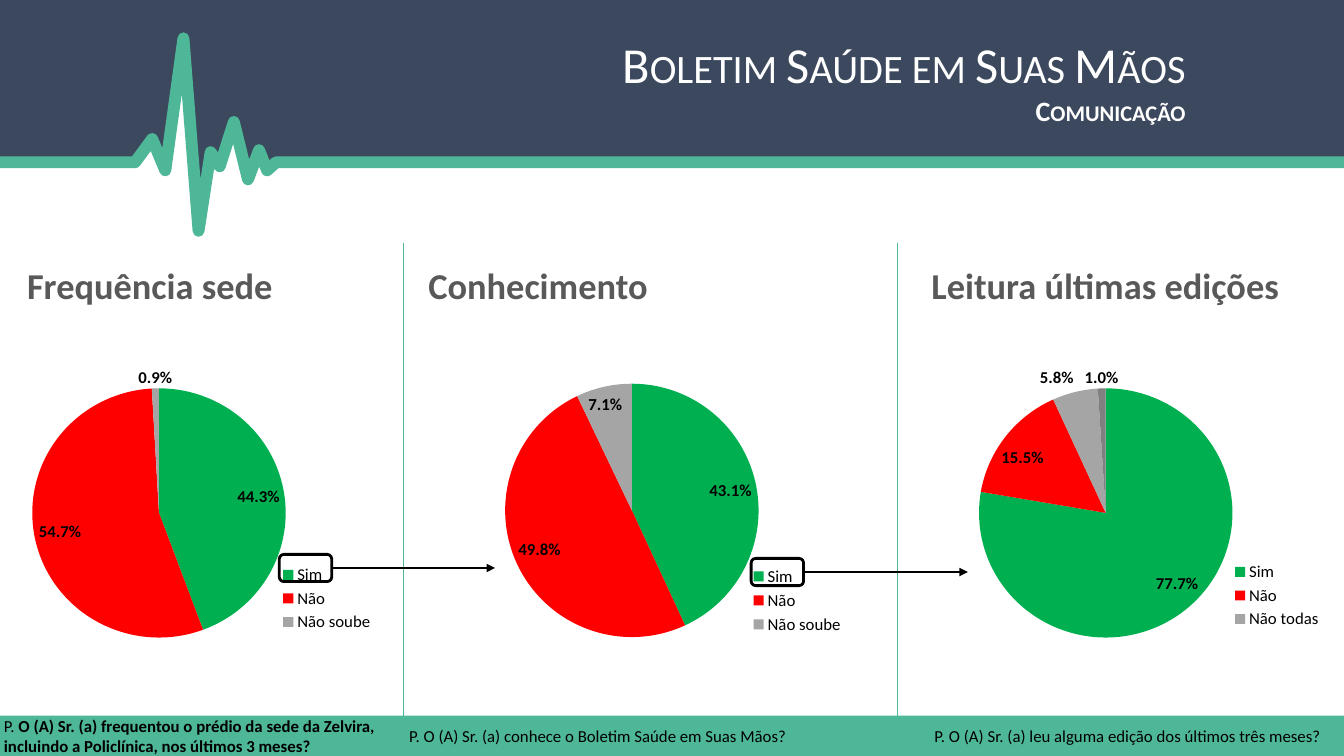
from lxml.etree import SubElement
from pptx import Presentation
from pptx.chart.data import CategoryChartData
from pptx.dml.color import RGBColor
from pptx.enum.chart import XL_CHART_TYPE, XL_LABEL_POSITION, XL_LEGEND_POSITION
from pptx.enum.shapes import MSO_CONNECTOR, MSO_SHAPE
from pptx.enum.text import MSO_ANCHOR, MSO_AUTO_SIZE, PP_ALIGN
from pptx.oxml import parse_xml
from pptx.oxml.ns import nsdecls, qn
from pptx.util import Inches, Pt

WIDE, HIGH = 13.33, 7.5
FONT = "Calibri"
NAVY, GREEN, WHITE, BLACK, GREY = "3B485D", "4EB798", "FFFFFF", "000000", "595959"
SLICES = ["00B050", "FF0000", "A5A5A5", "808080"]

TITLE = [("Boletim Saúde em Suas Mãos", 36, False), ("Comunicação", 20, True)]
PULSE = [(0, 1.61), (1.34, 1.61), (1.51, 1.38), (1.64, 1.69), (1.82, 0.38),
         (1.97, 2.29), (2.09, 1.51), (2.18, 1.65), (2.32, 1.21), (2.46, 1.78),
         (2.57, 1.49), (2.65, 1.69), (2.74, 1.61), (WIDE, 1.61)]

# heading, heading left and width, chart left, legend place, answers
PANELS = [
    ("Frequência sede", 0.17, 3.03, -0.52, (0.655, 0.65),
     {"Sim": 0.443, "Não": 0.547, "Não soube": 0.009}),
    ("Conhecimento", 4.15, 3.12, 4.17, (0.65, 0.66),
     {"Sim": 0.431, "Não": 0.498, "Não soube": 0.071}),
    ("Leitura últimas edições", 9.14, 3.94, 8.87, (0.665, 0.64),
     {"Sim": 0.777, "Não": 0.155, "Não todas": 0.058, "Não soube": 0.01}),
]
# box, then runs as (text, bold)
ASKED = [
    ((-0.06, 7.05, 4.08, 0.5),
     [("P. ", False), ("O (A) Sr. (a) frequentou o prédio da sede da Zelvira, "
                       "incluindo a Policlínica, nos últimos 3 meses?", True)]),
    ((3.96, 7.15, 4.99, 0.31),
     [("P. O (A) Sr. (a) conhece o Boletim Saúde em Suas Mãos?", False)]),
    ((9.17, 7.15, 4.17, 0.31),
     [("P. O (A) Sr. (a) leu alguma edição dos últimos três meses?", False)]),
]
SPLITS = [4, 8.9]
KEYS = [(2.77, 5.5, 4.91), (7.45, 5.54, 9.6)]  # left, top, arrow end


def rgb(code):
    return RGBColor.from_string(code)


def inches(*nums):
    return [Inches(num) for num in nums]


def style(font, size, color, bold=False):
    font.name, font.size, font.bold = FONT, Pt(size), bold
    font.color.rgb = rgb(color)


def paint(shape, fill=None, line=None, width=1):
    shape.shadow.inherit = False
    if fill:
        shape.fill.solid()
        shape.fill.fore_color.rgb = rgb(fill)
    else:
        shape.fill.background()
    if line:
        shape.line.color.rgb = rgb(line)
        shape.line.width = Pt(width)
    else:
        shape.line.fill.background()


def outline(shapes, points, close):
    first, *rest = [inches(*point) for point in points]
    form = shapes.build_freeform(*first)
    form.add_line_segments(rest, close=close)
    return form.convert_to_shape()


def label(shapes, box, runs, size, color):
    frame = shapes.add_textbox(*inches(*box)).text_frame
    frame.word_wrap = True
    for text, bold in runs:
        run = frame.paragraphs[0].add_run()
        run.text = text
        style(run.font, size, color, bold)


def link(shapes, start, end, color, width):
    line = shapes.add_connector(MSO_CONNECTOR.STRAIGHT, *inches(*start, *end))
    line.line.color.rgb = rgb(color)
    line.line.width = Pt(width)
    SubElement(line._element.spPr, qn("a:effectLst"))
    return line


def layout(parts):
    """Manual chart layout from pairs of tag and value."""
    body = "".join(f'<c:{tag} val="{val}"/>' for tag, val in parts)
    return parse_xml(f'<c:layout {nsdecls("c")}><c:manualLayout>{body}'
                     '</c:manualLayout></c:layout>')


def clear(parent):
    for old in parent.findall(qn("c:layout")):
        parent.remove(old)


def pie(shapes, left, place, answers):
    data = CategoryChartData(number_format="0.0%")
    data.categories = list(answers)
    data.add_series("Series 1", list(answers.values()))
    chart = shapes.add_chart(XL_CHART_TYPE.PIE, *inches(left, 3.6, 5, 3), data).chart
    chart.has_title = False
    style(chart.font, 10, BLACK)
    plot = chart.plots[0]
    plot.vary_by_categories = True
    for num in range(len(answers)):
        fill = plot.series[0].points[num].format.fill
        fill.solid()
        fill.fore_color.rgb = rgb(SLICES[num])

    plot.has_data_labels = True
    labels = plot.data_labels
    labels.show_value = True
    labels.show_percentage = False
    labels.number_format, labels.number_format_is_linked = "0.0%", False
    labels.position = XL_LABEL_POSITION.BEST_FIT
    style(labels.font, 12, BLACK, True)

    chart.has_legend = True
    legend = chart.legend
    legend.position = XL_LEGEND_POSITION.RIGHT
    legend.include_in_layout = False
    style(legend.font, 12, BLACK)
    root = legend._element
    clear(root)
    side = root.get_or_add_legendPos()
    modes = [("xMode", "edge"), ("yMode", "edge")]
    side.addnext(layout(modes + list(zip("xy", place))))
    if len(answers) > 3:
        side.addnext(parse_xml(f'<c:legendEntry {nsdecls("c")}><c:idx val="3"/>'
                               '<c:delete val="1"/></c:legendEntry>'))

    area = chart._chartSpace.chart.plotArea
    clear(area)
    sizes = list(zip("xywh", (0.113, 0.069, 0.613, 0.838)))
    area.insert(0, layout([("layoutTarget", "inner")] + modes + sizes))


def head(shapes):
    banner = outline(shapes, PULSE + [(WIDE, 0), (0, 0)], True)
    paint(banner, NAVY)
    pulse = outline(shapes, PULSE, False)
    paint(pulse, line=GREEN, width=8.5)
    SubElement(pulse.line._get_or_add_ln(), qn("a:round"))

    title = shapes.title
    shapes._spTree.append(title._element)
    title.left, title.top, title.width, title.height = inches(2.46, 0.28, 9.4, 1.04)
    frame = title.text_frame
    frame.text = "\n".join(text for text, _, _ in TITLE)
    frame.auto_size = MSO_AUTO_SIZE.NONE
    frame.vertical_anchor = MSO_ANCHOR.TOP
    for para, (_, size, bold) in zip(frame.paragraphs, TITLE):
        para.alignment = PP_ALIGN.RIGHT
        run = para.runs[0]
        style(run.font, size, WHITE, bold)
        run._r.get_or_add_rPr().set("cap", "small")


def main():
    deck = Presentation()
    deck.slide_width, deck.slide_height = inches(WIDE, HIGH)
    shapes = deck.slides.add_slide(deck.slide_layouts[5]).shapes
    head(shapes)
    band = shapes.add_shape(MSO_SHAPE.RECTANGLE, *inches(0, 7.1, WIDE, 0.4))
    paint(band, GREEN)
    for name, left, width, start, place, answers in PANELS:
        pie(shapes, start, place, answers)
        label(shapes, (left, 2.56, width, 0.54), [(name, True)], 26, GREY)
    for box, runs in ASKED:
        label(shapes, box, runs, 12, BLACK)
    for left in SPLITS:
        link(shapes, (left, 2.41), (left, 7.1), GREEN, 1)
    for left, top, end in KEYS:
        key = shapes.add_shape(MSO_SHAPE.ROUNDED_RECTANGLE,
                               *inches(left, top, 0.52, 0.27))
        paint(key, line=BLACK, width=2)
        mid = top + 0.135
        arrow = link(shapes, (left + 0.52, mid), (end, mid), BLACK, 2)
        arrow.begin_connect(key, 3)
        SubElement(arrow.line._get_or_add_ln(), qn("a:tailEnd"), type="triangle")
    deck.save("out.pptx")


if __name__ == "__main__":
    main()
